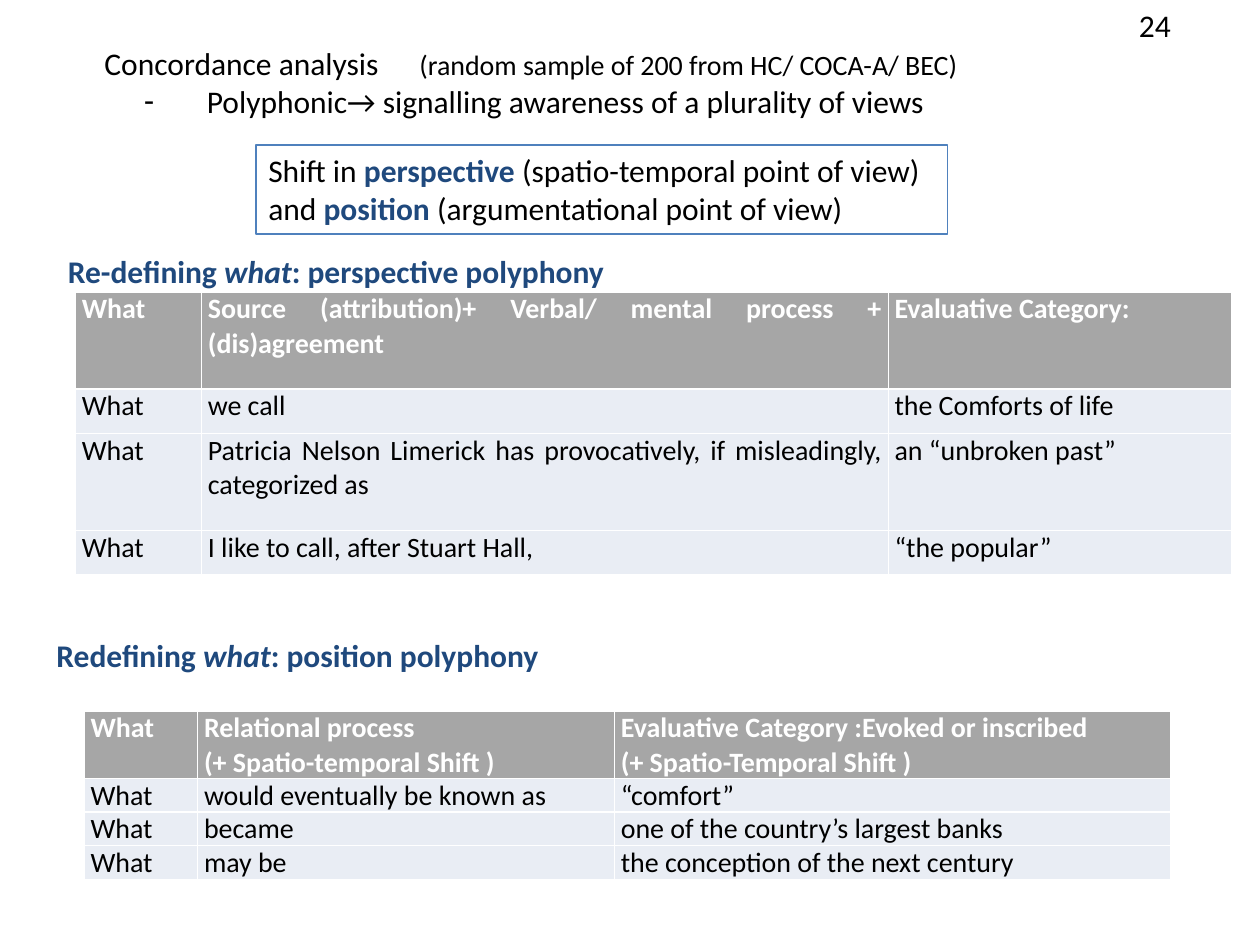
from dataclasses import dataclass

from lxml.etree import SubElement
from pptx import Presentation
from pptx.dml.color import RGBColor
from pptx.enum.shapes import MSO_SHAPE
from pptx.enum.text import MSO_ANCHOR, MSO_AUTO_SIZE, PP_ALIGN
from pptx.oxml.ns import qn
from pptx.util import Pt

FONT = "Calibri"
BLACK = "000000"
WHITE = "FFFFFF"
NAVY = "1F497D"
BLUE = "4F81BD"
HEADER_GRAY = "A6A6A6"
ROW_TINT = "E9EDF4"


@dataclass
class Frame:
    left: float
    top: float
    width: float
    height: float

    def lengths(self) -> tuple:
        return Pt(self.left), Pt(self.top), Pt(self.width), Pt(self.height)


@dataclass
class Piece:
    text: str
    bold: bool | None = None
    italic: bool | None = None
    color: str | None = None
    size: float | None = None


@dataclass
class Grid:
    left: float
    top: float
    columns: list[float]
    rows: list[float]
    cells: list[list[str]]


def rgb(color: str) -> RGBColor:
    return RGBColor.from_string(color)


def style_paragraph(para, size: float, color: str, bold: bool = False) -> None:
    font = para.font
    font.name = FONT
    font.size = Pt(size)
    font.bold = bold
    font.color.rgb = rgb(color)


def add_pieces(para, pieces: list[Piece]) -> None:
    for piece in pieces:
        span = para.add_run()
        span.text = piece.text
        if piece.bold is not None:
            span.font.bold = piece.bold
        if piece.italic is not None:
            span.font.italic = piece.italic
        if piece.color:
            span.font.color.rgb = rgb(piece.color)
        if piece.size:
            span.font.size = Pt(piece.size)


def write_lines(box, lines: list[list[Piece]], color: str, bold: bool = False) -> None:
    frame = box.text_frame
    frame.word_wrap = True
    frame.auto_size = MSO_AUTO_SIZE.SHAPE_TO_FIT_TEXT
    frame.vertical_anchor = MSO_ANCHOR.TOP
    for index, pieces in enumerate(lines):
        para = frame.add_paragraph() if index else frame.paragraphs[0]
        para.alignment = PP_ALIGN.LEFT
        para.space_before = Pt(0)
        add_pieces(para, pieces)
        style_paragraph(para, 18, color, bold)


def add_text(page, frame: Frame, pieces: list[Piece], color: str, bold: bool = False) -> None:
    write_lines(page.shapes.add_textbox(*frame.lengths()), [pieces], color, bold)


def set_indent(para, margin: float, indent: float, bullet: str = "", tab: float = 0) -> None:
    properties = para._p.get_or_add_pPr()
    properties.set("marL", str(Pt(margin)))
    properties.set("indent", str(Pt(indent)))
    marks = []
    if bullet:
        marks.append(SubElement(properties, qn("a:buChar"), char=bullet))
    else:
        marks.append(SubElement(properties, qn("a:buNone")))
    if tab:
        stops = SubElement(properties, qn("a:tabLst"))
        SubElement(stops, qn("a:tab"), pos=str(Pt(tab)), algn="l")
        marks.append(stops)
    defaults = properties.find(qn("a:defRPr"))
    for mark in marks:
        defaults.addprevious(mark)


def fill_cell(cell, text: str, is_header: bool) -> None:
    cell.margin_left = cell.margin_right = Pt(3.6)
    cell.margin_top = cell.margin_bottom = Pt(0)
    cell.text_frame.text = text
    for para in cell.text_frame.paragraphs:
        para.alignment = PP_ALIGN.JUSTIFY
        style_paragraph(para, 16, WHITE if is_header else BLACK, is_header)
    properties = cell._tc.get_or_add_tcPr()
    for side in ("lnL", "lnR", "lnT", "lnB"):
        line = SubElement(properties, qn(f"a:{side}"), w=str(Pt(1)))
        solid = SubElement(line, qn("a:solidFill"))
        SubElement(solid, qn("a:srgbClr"), val=WHITE)
    cell.fill.solid()
    cell.fill.fore_color.rgb = rgb(HEADER_GRAY if is_header else ROW_TINT)


def add_grid(page, grid: Grid) -> None:
    frame = Frame(grid.left, grid.top, sum(grid.columns), sum(grid.rows))
    table = page.shapes.add_table(len(grid.rows), len(grid.columns), *frame.lengths()).table
    table.horz_banding = False
    for column, width in zip(table.columns, grid.columns):
        column.width = Pt(width)
    for row_index, (row, height) in enumerate(zip(table.rows, grid.rows)):
        row.height = Pt(height)
        for cell, text in zip(row.cells, grid.cells[row_index]):
            fill_cell(cell, text, row_index == 0)


def add_summary(page) -> None:
    body = page.placeholders[1]
    body.left, body.top, body.width, body.height = Frame(52.5, 21.6, 600, 51).lengths()
    write_lines(body, [
        [Piece("Concordance analysis\t"),
         Piece("(random sample of 200 from HC/ COCA-A/ BEC)", size=16)],
        [Piece("Polyphonic→ signalling awareness of a plurality of views")],
    ], BLACK)
    heading, point = body.text_frame.paragraphs
    set_indent(heading, 0, 0, tab=169.4)
    set_indent(point, 58.5, -36, bullet="-")


def add_definition(page) -> None:
    box = page.shapes.add_shape(MSO_SHAPE.RECTANGLE, *Frame(146.2, 82.8, 395.3, 51).lengths())
    box.shadow.inherit = False
    box.fill.background()
    box.line.color.rgb = rgb(BLUE)
    box.line.width = Pt(0.75)
    write_lines(box, [
        [Piece("Shift in "), Piece("perspective", bold=True, color=NAVY),
         Piece(" (spatio-temporal point of view)")],
        [Piece("and "), Piece("position", bold=True, color=NAVY),
         Piece(" (argumentational point of view)")],
    ], BLACK)


PERSPECTIVE = Grid(43.2, 167, [72, 392.4, 196], [55.4, 25.4, 55.4, 25.4], [
    ["What", "Source (attribution)+ Verbal/ mental process + (dis)agreement",
     "Evaluative Category:"],
    ["What", "we call", "the Comforts of life"],
    ["What", "Patricia Nelson Limerick has provocatively, if misleadingly, categorized as",
     "an “unbroken past”"],
    ["What", "I like to call, after Stuart Hall,", "“the popular”"],
])
POSITION = Grid(48.2, 406.4, [64.8, 238.2, 318], [38.2, 19.1, 19.1, 19.1], [
    ["What", "Relational process\n(+ Spatio-temporal Shift )",
     "Evaluative Category :Evoked or inscribed\n(+ Spatio-Temporal Shift )"],
    ["What", "would eventually be known as", "“comfort”"],
    ["What", "became", "one of the country’s largest banks"],
    ["What", "may be", "the conception of the next century"],
])


def main() -> None:
    deck = Presentation()
    deck.slide_width, deck.slide_height = Pt(720), Pt(540)
    page = deck.slides.add_slide(deck.slide_layouts[1])
    title = page.shapes.title.element
    title.getparent().remove(title)
    add_text(page, Frame(643.7, 0, 60, 29), [Piece("24")], BLACK)
    add_grid(page, POSITION)
    add_grid(page, PERSPECTIVE)
    add_text(page, Frame(31.7, 140.4, 325, 29), [
        Piece("Re-defining "), Piece("what", italic=True), Piece(": perspective polyphony"),
    ], NAVY, bold=True)
    add_text(page, Frame(25.2, 360, 487.4, 29), [
        Piece("Redefining "), Piece("what", italic=True), Piece(": position polyphony"),
    ], NAVY, bold=True)
    add_summary(page)
    add_definition(page)
    deck.save("out.pptx")


if __name__ == "__main__":
    main()
